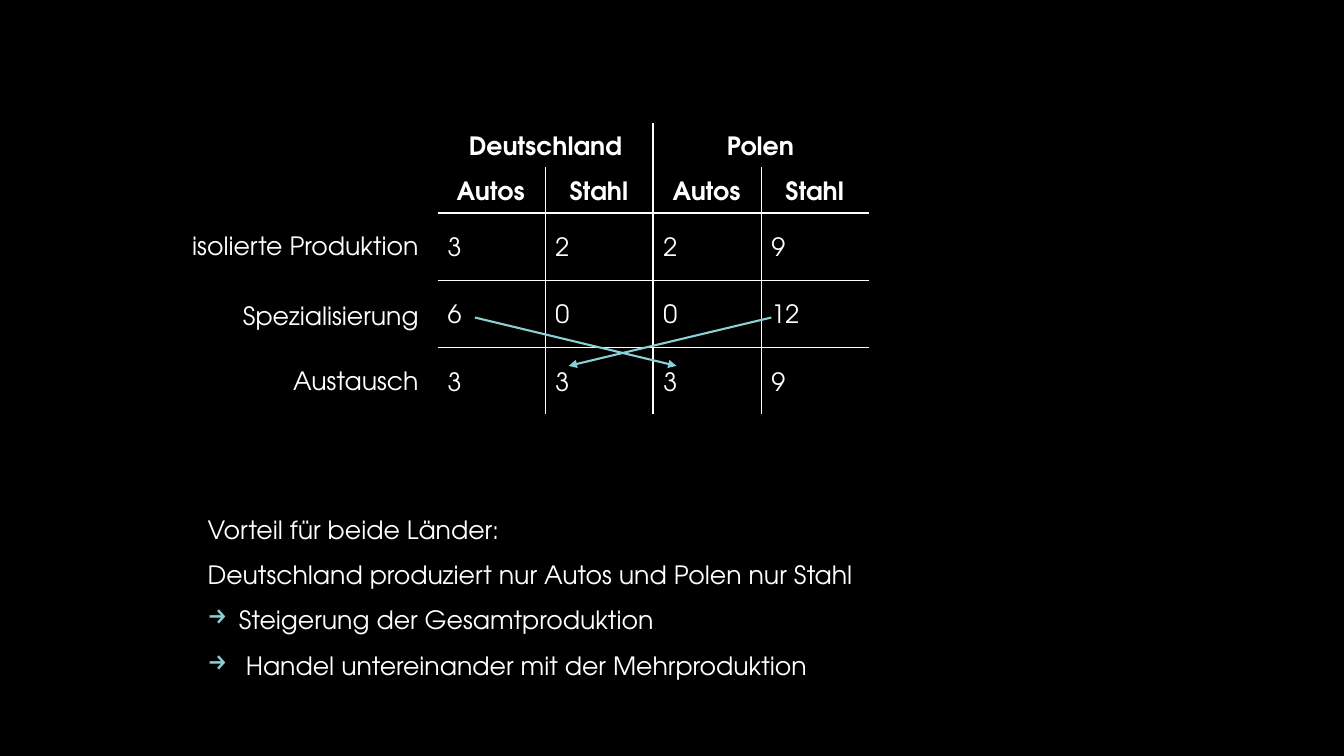
from dataclasses import dataclass
from lxml import etree
from pptx import Presentation
from pptx.dml.color import RGBColor as Rgb
from pptx.enum.shapes import MSO_CONNECTOR as Link
from pptx.enum.text import MSO_AUTO_SIZE as Fit, PP_ALIGN as Align
from pptx.oxml.ns import qn
from pptx.util import Emu, Pt

PX = 9144  # EMU per px, 100 px to the inch


@dataclass(frozen=True)
class Theme:
    back: str = "000000"
    ink: str = "FFFFFF"
    accent: str = "8AD0D6"
    font: str = "TeX Gyre Adventor"
    size: int = 18
    thin: float = 0.5
    thick: float = 1.5


@dataclass(frozen=True)
class Box:
    x: int
    y: int
    w: int
    h: int


@dataclass(frozen=True)
class Rule:
    x1: int
    y1: int
    x2: int
    y2: int
    width: float


@dataclass(frozen=True)
class Head:
    text: str
    col: int
    span: int
    y: int
    w: int


@dataclass(frozen=True)
class Row:
    label: str
    y: int
    cells: tuple[int, ...]


@dataclass(frozen=True)
class Note:
    text: str
    indent: int = 0


THEME = Theme()

# Table grid
LEFT, TOP, BASE = 434, 211, 411
COL, STEP, COLS = 107, 67, 4
RIGHT = LEFT + COLS * COL

HEADS = [Head("Deutschland", 0, 2, 129, 153), Head("Polen", 2, 2, 129, 68)]
for col in range(COLS):
    name, wide = (("Autos", 69), ("Stahl", 59))[col % 2]
    HEADS.append(Head(name, col, 1, 174, wide))

ROWS = (
    Row("isolierte Produktion", 224, (3, 2, 2, 9)),
    Row("Spezialisierung", 293, (6, 0, 0, 12)),
    Row("Austausch", 358, (3, 3, 3, 9)),
)

RULES = (
    Rule(LEFT + COL, 166, LEFT + COL, BASE, THEME.thin),
    Rule(LEFT + 2 * COL, 122, LEFT + 2 * COL, BASE, THEME.thick),
    Rule(LEFT + 3 * COL, 166, LEFT + 3 * COL, BASE, THEME.thin),
    Rule(LEFT, TOP, RIGHT, TOP, THEME.thick),
    Rule(LEFT, TOP + STEP, RIGHT, TOP + STEP, THEME.thin),
    Rule(LEFT, TOP + 2 * STEP, RIGHT, TOP + 2 * STEP, THEME.thin),
)

SWAPS = (
    Rule(471, 315, 671, 363, THEME.thick),
    Rule(765, 315, 564, 363, THEME.thick),
)

NOTES = (
    Note("Vorteil für beide Länder:"),
    Note("Deutschland produziert nur Autos und Polen nur Stahl"),
    Note("Steigerung der Gesamtproduktion", 31),
    Note("Handel untereinander mit der Mehrproduktion", 38),
)


def style(para, bold: bool = False) -> None:
    for run in para.runs:
        font = run.font
        font.name, font.size, font.bold = THEME.font, Pt(THEME.size), bold
        font.color.rgb = Rgb.from_string(THEME.ink)


def frame(slide, box: Box, tight: bool):
    area = (Emu(n * PX) for n in (box.x, box.y, box.w, box.h))
    text = slide.shapes.add_textbox(*area).text_frame
    text.word_wrap = not tight
    text.auto_size = Fit.SHAPE_TO_FIT_TEXT
    if tight:
        text.margin_left = text.margin_right = 0
        text.margin_top = text.margin_bottom = 0
    return text


def label(slide, box: Box, words: str, bold: bool = False,
          tight: bool = True, align: Align = Align.LEFT) -> None:
    para = frame(slide, box, tight).paragraphs[0]
    para.text = words
    para.alignment = align
    style(para, bold)


def line(slide, rule: Rule, color: str, arrow: bool = False) -> None:
    ends = (Emu(n * PX) for n in (rule.x1, rule.y1, rule.x2, rule.y2))
    link = slide.shapes.add_connector(Link.STRAIGHT, *ends)
    link.line.color.rgb = Rgb.from_string(color)
    link.line.width = Pt(rule.width)
    if arrow:
        stroke = link.line.fill and link._element.spPr.find(qn("a:ln"))
        etree.SubElement(stroke, qn("a:tailEnd"), type="triangle")
    etree.SubElement(link._element.spPr, qn("a:effectLst"))


def bullet(para, indent: int) -> None:
    props = para._p.get_or_add_pPr()
    props.set("marL", str(indent * PX))
    props.set("indent", str(-indent * PX))
    color = etree.SubElement(props, qn("a:buClr"))
    etree.SubElement(color, qn("a:srgbClr"), val=THEME.accent)
    etree.SubElement(props, qn("a:buChar"), char="→")


def notes(slide, box: Box) -> None:
    text = frame(slide, box, False)
    for i, note in enumerate(NOTES):
        para = text.add_paragraph() if i else text.paragraphs[0]
        para.text = note.text
        if note.indent:
            bullet(para, note.indent)
        para.line_spacing = 1.5
        style(para)


def main() -> None:
    deck = Presentation()
    deck.slide_width, deck.slide_height = Emu(1333 * PX), Emu(750 * PX)
    slide = deck.slides.add_slide(deck.slide_layouts[6])
    fill = slide.background.fill
    fill.solid()
    fill.fore_color.rgb = Rgb.from_string(THEME.back)

    # Conclusion
    notes(slide, Box(196, 490, 971, 192))

    # Table lines
    for rule in RULES:
        line(slide, rule, THEME.ink)

    # Column heads, centred over their columns
    for head in HEADS:
        x = LEFT + head.col * COL + (head.span * COL - head.w + 1) // 2
        label(slide, Box(x, head.y, head.w, 30), head.text, bold=True)

    # Rows
    for i, row in enumerate(ROWS):
        for col, value in enumerate(row.cells):
            wide = 26 if value < 10 else 42
            spot = Box(LEFT + 10 + col * COL, TOP + 18 + i * STEP, wide, 35)
            label(slide, spot, str(value))
        label(slide, Box(166, row.y, 259, 40), row.label,
              tight=False, align=Align.RIGHT)

    # Exchange arrows
    for swap in SWAPS:
        line(slide, swap, THEME.accent, arrow=True)

    deck.save("out.pptx")


if __name__ == "__main__":
    main()
